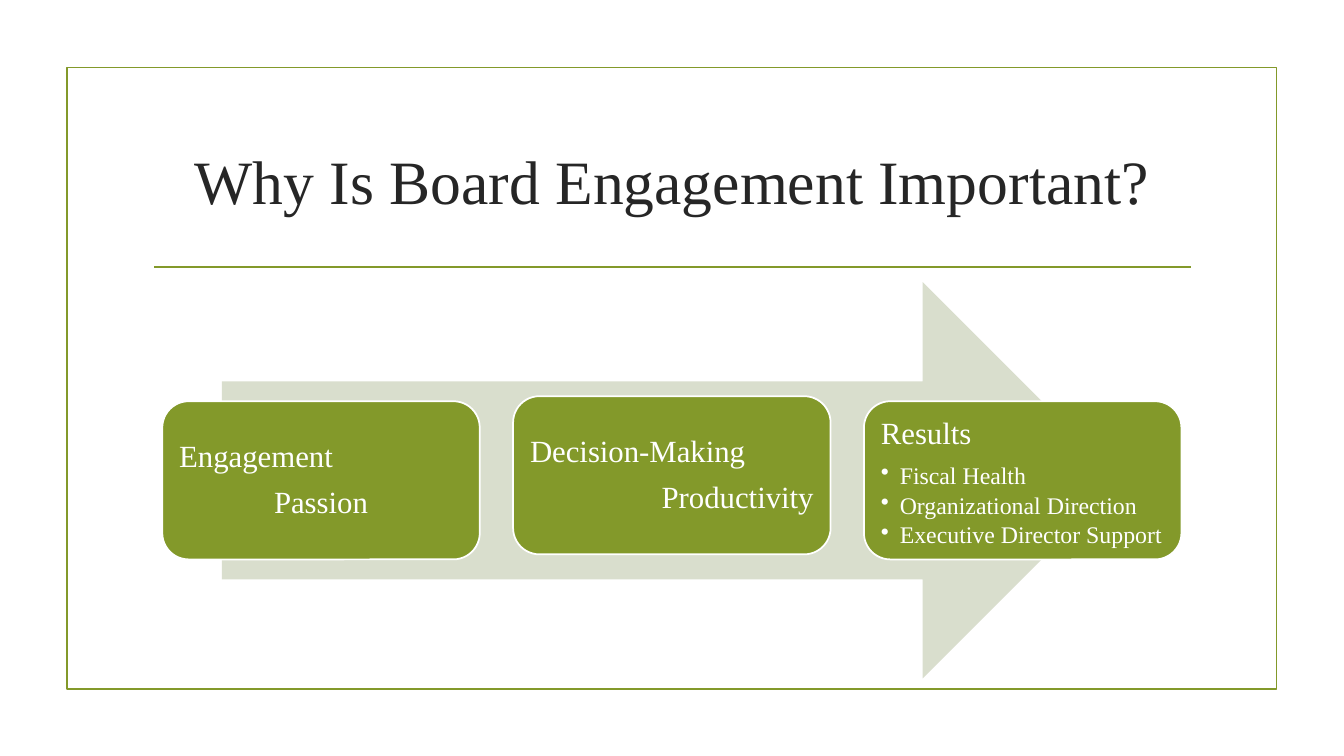
from dataclasses import dataclass

import pptx
import pptx.dml.color
import pptx.enum.shapes
import pptx.enum.text
import pptx.oxml.ns
import pptx.shapes.autoshape
import pptx.slide
import pptx.text.text
import pptx.util
from lxml import etree

Pt = pptx.util.Pt
Kind = pptx.enum.shapes.MSO_SHAPE
Align = pptx.enum.text.PP_ALIGN
Anchor = pptx.enum.text.MSO_ANCHOR

GREEN, PALE, WHITE, INK = "83992A", "D9DECD", "FFFFFF", "262626"
FACE = "Times New Roman"
EDGE = 1.25
LEFT, STEP, WIDE, HIGH = 115.9, 250.6, 226.8, 113


@dataclass
class Line:
    text: str
    align: Align = Align.LEFT
    bullet: bool = False


@dataclass
class Step:
    top: float
    anchor: Anchor
    lines: list[Line]


STEPS = [
    Step(286.6, Anchor.MIDDLE, [Line("Engagement"), Line("Passion", Align.CENTER)]),
    Step(283, Anchor.MIDDLE, [Line("Decision-Making"), Line("Productivity", Align.RIGHT)]),
    Step(286.6, Anchor.TOP, [
        Line("Results"),
        Line("Fiscal Health", bullet=True),
        Line("Organizational Direction", bullet=True),
        Line("Executive Director Support", bullet=True),
    ]),
]


def color(code: str) -> pptx.dml.color.RGBColor:
    return pptx.dml.color.RGBColor.from_string(code)


def apply(target: object, values: dict) -> None:
    for name, value in values.items():
        setattr(target, name, value)


def style(part: pptx.text.text._Paragraph, size: float, ink: str) -> None:
    apply(part.font, {"name": FACE, "size": Pt(size), "bold": False})
    part.font.color.rgb = color(ink)


def draw(slide: pptx.slide.Slide, kind: Kind, box: tuple, fill: str | None,
         edge: str | None) -> pptx.shapes.autoshape.Shape:
    shape = slide.shapes.add_shape(kind, *map(Pt, box))
    shape.shadow.inherit = False
    if fill:
        shape.fill.solid()
        shape.fill.fore_color.rgb = color(fill)
    else:
        shape.fill.background()
    if edge:
        shape.line.color.rgb = color(edge)
        shape.line.width = Pt(EDGE)
    else:
        shape.line.fill.background()
    return shape


def rule(slide: pptx.slide.Slide, left: float, right: float, top: float) -> None:
    line = slide.shapes.add_connector(
        pptx.enum.shapes.MSO_CONNECTOR.STRAIGHT, Pt(left), Pt(top), Pt(right), Pt(top))
    line.line.color.rgb = color(GREEN)
    line.line.width = Pt(EDGE)
    etree.SubElement(line._element.spPr, pptx.oxml.ns.qn("a:effectLst"))


def bullet(part: pptx.text.text._Paragraph) -> None:
    props = part._p.get_or_add_pPr()
    props.set("marL", str(Pt(13.5)))
    props.set("indent", str(-Pt(13.5)))
    etree.SubElement(props, pptx.oxml.ns.qn("a:buChar"), char="•")


def write(part: pptx.text.text._Paragraph, line: Line) -> None:
    part.text = line.text
    apply(part, {
        "alignment": line.align,
        "level": int(line.bullet),
        "line_spacing": 0.9,
        "space_after": Pt(2.9 if line.bullet else 8.8),
    })
    if line.bullet:
        bullet(part)
    style(part, 17 if line.bullet else 22, WHITE)


def card(slide: pptx.slide.Slide, left: float, step: Step) -> None:
    shape = draw(slide, Kind.ROUNDED_RECTANGLE, (left, step.top, WIDE, HIGH), GREEN, WHITE)
    frame = shape.text_frame
    sides = ("left", "top", "right", "bottom")
    apply(frame, {f"margin_{side}": Pt(6.6) for side in sides})
    apply(frame, {"word_wrap": True, "vertical_anchor": step.anchor})
    for i, line in enumerate(step.lines):
        write(frame.add_paragraph() if i else frame.paragraphs[0], line)


def head(slide: pptx.slide.Slide, text: str) -> None:
    title = slide.shapes.title
    apply(title, {"left": Pt(102.2), "top": Pt(77), "width": Pt(756), "height": Pt(103)})
    title.text = text
    apply(title.text_frame, {"word_wrap": True, "vertical_anchor": Anchor.MIDDLE})
    part = title.text_frame.paragraphs[0]
    part.alignment = Align.CENTER
    style(part, 44, INK)


def main() -> None:
    deck = pptx.Presentation()
    apply(deck, {"slide_width": Pt(960), "slide_height": Pt(540)})
    slide = deck.slides.add_slide(deck.slide_layouts.get_by_name("Title Only"))
    head(slide, "Why Is Board Engagement Important?")
    draw(slide, Kind.RECTANGLE, (47.8, 48.2, 864, 444), None, GREEN)
    rule(slide, 110.2, 850.4, 190.8)
    draw(slide, Kind.RIGHT_ARROW, (158.4, 201.6, 642.2, 283), PALE, None)
    for i, step in enumerate(STEPS):
        card(slide, LEFT + i * STEP, step)
    deck.save("out.pptx")


if __name__ == "__main__":
    main()
